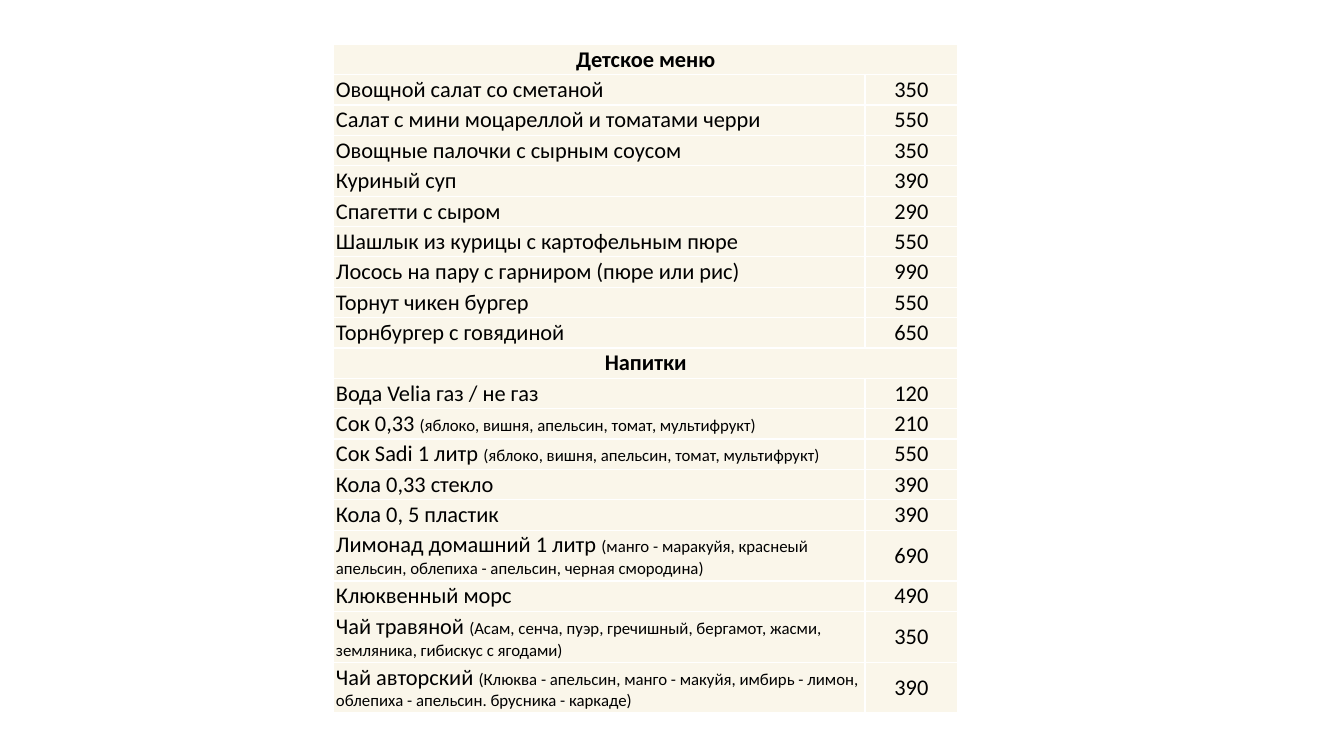
from lxml.etree import SubElement
from pptx import Presentation
from pptx.dml.color import RGBColor
from pptx.enum.text import MSO_ANCHOR as Anchor, PP_ALIGN as Align
from pptx.oxml.ns import qn
from pptx.util import Inches, Pt

# Content: section -> (dish, note, price)
MENU = {
    "Детское меню": [
        ("Овощной салат со сметаной", "", 350),
        ("Салат с мини моцареллой и томатами черри", "", 550),
        ("Овощные палочки с сырным соусом", "", 350),
        ("Куриный суп", "", 390),
        ("Спагетти с сыром", "", 290),
        ("Шашлык из курицы с картофельным пюре", "", 550),
        ("Лосось на пару с гарниром (пюре или рис)", "", 990),
        ("Торнут чикен бургер", "", 550),
        ("Торнбургер с говядиной", "", 650),
    ],
    "Напитки": [
        ("Вода Velia газ / не газ", "", 120),
        ("Сок 0,33", "(яблоко, вишня, апельсин, томат, мультифрукт)", 210),
        ("Сок Sadi 1 литр", "(яблоко, вишня, апельсин, томат, мультифрукт)", 550),
        ("Кола 0,33 стекло", "", 390),
        ("Кола 0, 5 пластик", "", 390),
        ("Лимонад домашний 1 литр", "(манго - маракуйя, краснеый апельсин, "
         "облепиха - апельсин, черная смородина)", 690),
        ("Клюквенный морс", "", 490),
        ("Чай травяной", "(Асам, сенча, пуэр, гречишный, бергамот, жасми, "
         "земляника, гибискус с ягодами)", 350),
        ("Чай авторский", "(Клюква - апельсин, манго - макуйя, имбирь - лимон, "
         "облепиха - апельсин. брусника - каркаде)", 390),
    ],
}
PRICE_ANCHORS = {"Детское меню": Anchor.BOTTOM, "Напитки": Anchor.MIDDLE}

CREAM = RGBColor(0xFA, 0xF6, 0xEA)
WHITE = RGBColor(0xFF, 0xFF, 0xFF)
BLACK = RGBColor(0, 0, 0)
LEFT, TOP = 3.31, 0.44
COLUMNS = (5.27, 0.92)
ROW, TALL_ROW = 0.28, 0.49
ONE_LINE_NOTE = 50  # longer notes wrap to a second line
MARGINS = {"margin_left": Pt(1.6), "margin_right": Pt(1.6),
           "margin_top": Pt(1.07), "margin_bottom": Pt(1.07)}


def style_cell(cell, anchor=Anchor.BOTTOM):
    """Margins, white one-point borders and cream fill."""
    for name, value in {**MARGINS, "vertical_anchor": anchor}.items():
        setattr(cell, name, value)
    properties = cell._tc.get_or_add_tcPr()
    for side in ("a:lnL", "a:lnR", "a:lnT", "a:lnB"):
        line = SubElement(properties, qn(side), w=str(Pt(1)))
        SubElement(SubElement(line, qn("a:solidFill")), qn("a:srgbClr"), val=str(WHITE))
    cell.fill.solid()
    cell.fill.fore_color.rgb = CREAM


def write(cell, runs, align=Align.LEFT, bold=False):
    """Fill a cell with (text, size) runs."""
    paragraph = cell.text_frame.paragraphs[0]
    paragraph.alignment = align
    for text, size in runs:
        run = paragraph.add_run()
        run.text = text
        for name, value in {"name": "Calibri", "size": Pt(size), "bold": bold}.items():
            setattr(run.font, name, value)
        run.font.color.rgb = BLACK


presentation = Presentation()
presentation.slide_width, presentation.slide_height = Inches(13.33), Inches(7.5)
slide = presentation.slides.add_slide(presentation.slide_layouts[6])

# Table grid
row_count = sum(1 + len(dishes) for dishes in MENU.values())
table = slide.shapes.add_table(row_count, len(COLUMNS), Inches(LEFT), Inches(TOP),
                               Inches(sum(COLUMNS)), Inches(ROW * row_count)).table
table.first_row = table.horz_banding = False
for column, width in zip(table.columns, COLUMNS):
    column.width = Inches(width)

# Section headings and their dishes
rows = iter(table.rows)
for section, dishes in MENU.items():
    heading = next(rows)
    heading.height = Inches(ROW)
    for cell in heading.cells:
        style_cell(cell)
    first, last = heading.cells
    first.merge(last)
    write(first, [(section, 16)], Align.CENTER, bold=True)

    for dish, note, price in dishes:
        row = next(rows)
        row.height = Inches(TALL_ROW if len(note) > ONE_LINE_NOTE else ROW)
        dish_cell, price_cell = row.cells
        style_cell(dish_cell)
        style_cell(price_cell, PRICE_ANCHORS[section])
        write(dish_cell, [(dish + " ", 16), (note, 12)] if note else [(dish, 16)])
        write(price_cell, [(str(price), 16)], Align.CENTER)

presentation.save("out.pptx")
